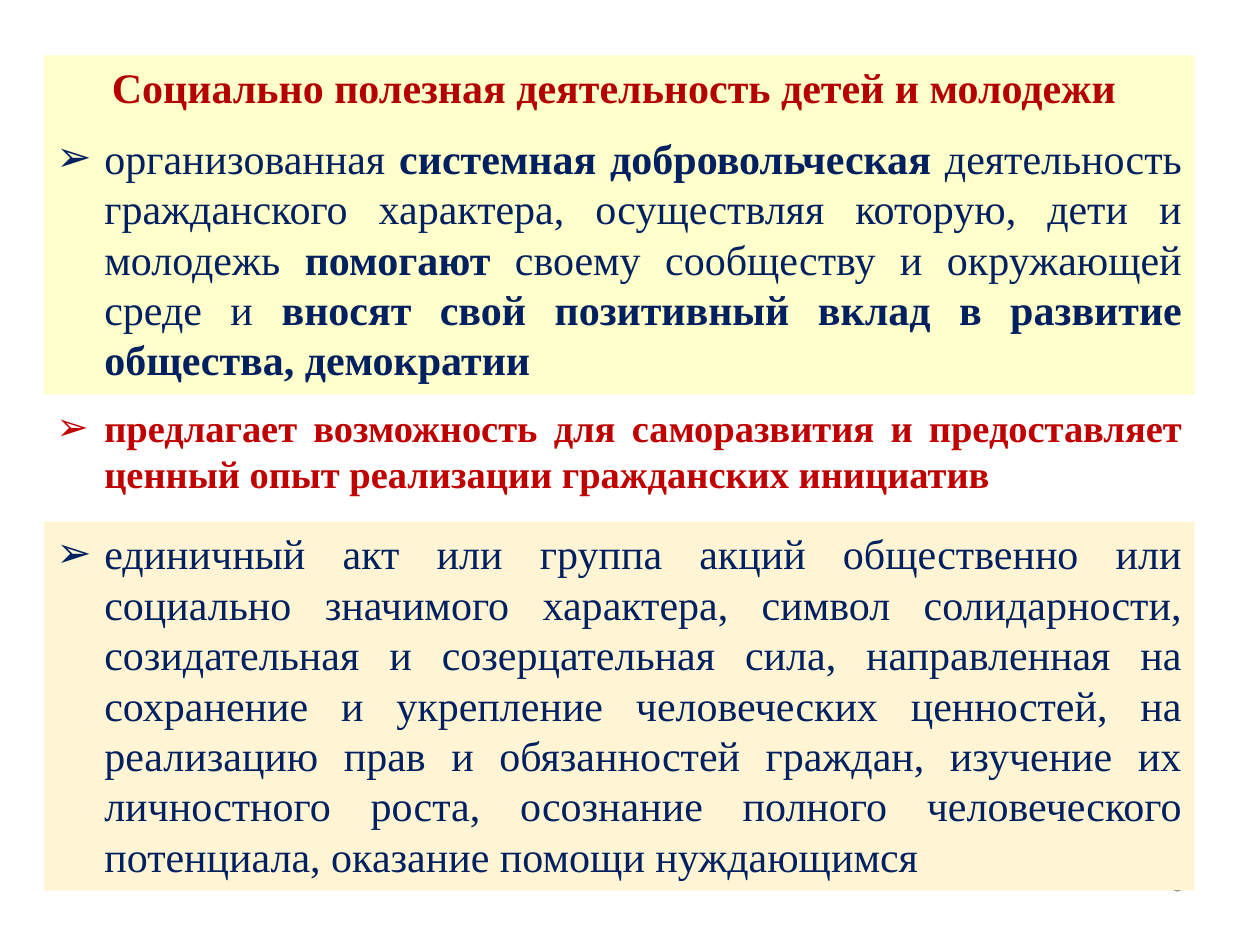
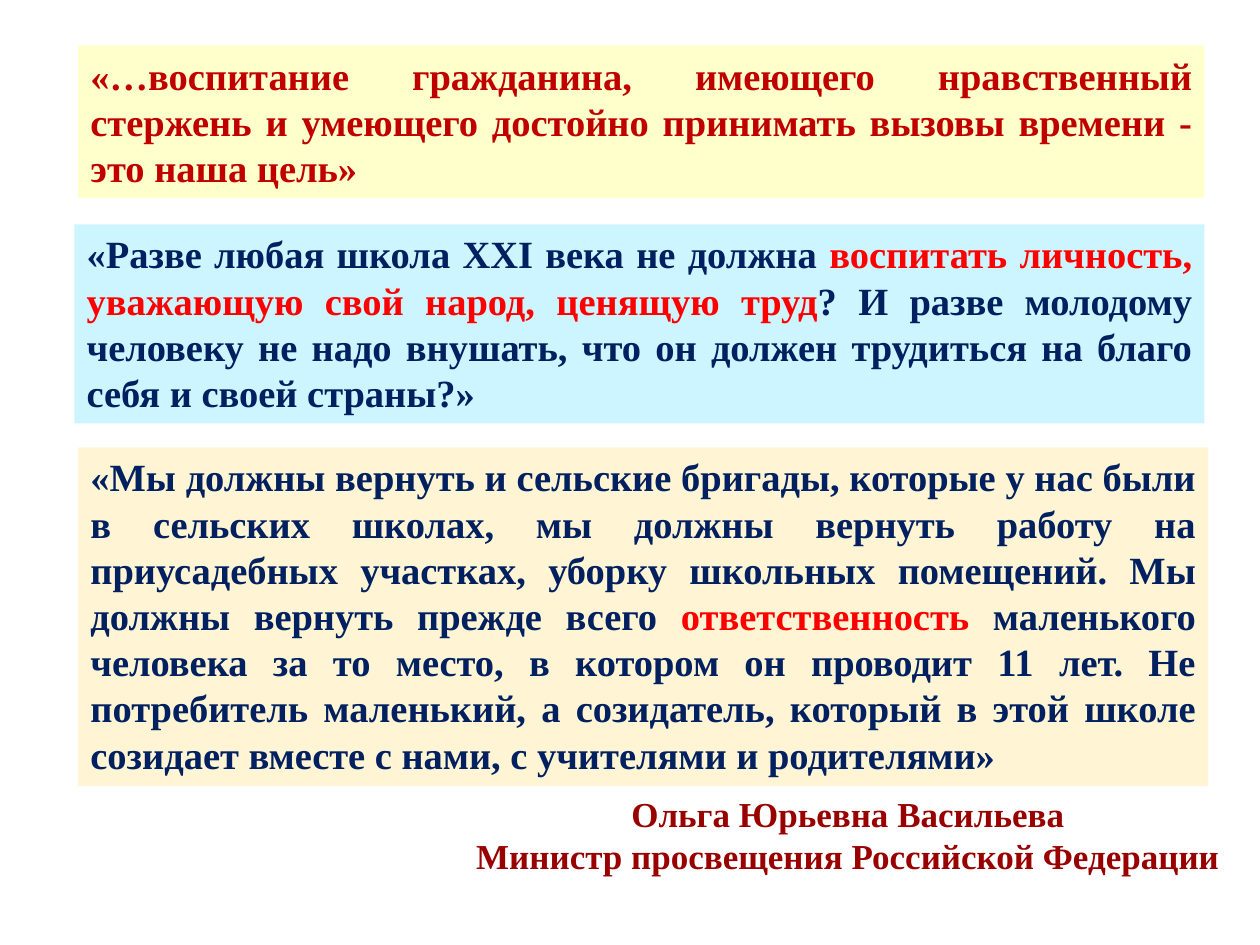
"""Two slides on socially useful youth work: definitions and a minister's quotations."""
from lxml.etree import SubElement
from pptx import Presentation
from pptx.dml.color import RGBColor
from pptx.enum.shapes import MSO_SHAPE
from pptx.enum.text import MSO_ANCHOR, PP_ALIGN
from pptx.oxml.ns import qn
from pptx.util import Inches, Pt

COLORS = {
    "yellow": "FFFFCC", "cream": "FFF5D5", "sky": "CDF5FF",
    "navy": "002060", "crimson": "C00000", "heading": "B40000",
    "red": "FF0000", "maroon": "990000", "black": "000000",
}
FONT = "Times New Roman"
JUSTIFY, CENTER, RIGHT = PP_ALIGN.JUSTIFY, PP_ALIGN.CENTER, PP_ALIGN.RIGHT


def add_panel(slide, box, fill=None):
    """Add a filled rectangle, or a plain text box, and return its text frame."""
    place = [Inches(length) for length in box]
    if fill:
        panel = slide.shapes.add_shape(MSO_SHAPE.RECTANGLE, *place)
        panel.shadow.inherit = False
        panel.fill.solid()
        panel.fill.fore_color.rgb = RGBColor.from_string(COLORS[fill])
        panel.line.fill.background()
    else:
        panel = slide.shapes.add_textbox(*place)
    panel.text_frame.word_wrap = True
    panel.text_frame.vertical_anchor = MSO_ANCHOR.TOP
    return panel.text_frame


def write(paragraph, pieces, size, align=JUSTIFY, bullet=False, font=FONT):
    """Fill a paragraph with (text, colour, bold) pieces."""
    paragraph.alignment = align
    if bullet:
        properties = paragraph._p.get_or_add_pPr()
        properties.set("marL", str(Inches(0.38)))
        properties.set("indent", str(-Inches(0.38)))
        SubElement(properties, qn("a:buFont")).set("typeface", "Arial")
        SubElement(properties, qn("a:buChar")).set("char", "➢")
    for text, color, bold in pieces:
        run = paragraph.add_run()
        run.text = text
        run.font.name = font
        run.font.size = Pt(size)
        run.font.bold = bold
        run.font.color.rgb = RGBColor.from_string(COLORS[color])


deck = Presentation()
deck.slide_width, deck.slide_height = Inches(10), Inches(7.5)
blank = deck.slide_layouts[6]

definitions = deck.slides.add_slide(blank)
page_number = add_panel(definitions, (7.17, 6.83, 2.33, 0.52))
write(page_number.paragraphs[0], [("5", "black", False)], 14, RIGHT, font="Arial")

activity = add_panel(definitions, (0.35, 0.44, 9.13, 2.69), "yellow")
write(activity.paragraphs[0],
      [("Социально полезная деятельность детей и молодежи ", "heading", True)], 24, CENTER)
activity.paragraphs[0].space_after = Pt(11.5)
write(activity.add_paragraph(), [
    ("организованная ", "navy", False),
    ("системная добровольческая", "navy", True),
    (" деятельность гражданского характера, осуществляя которую, дети и молодежь ", "navy", False),
    ("помогают", "navy", True),
    (" своему сообществу и окружающей среде и ", "navy", False),
    ("вносят свой позитивный вклад в развитие общества, демократии", "navy", True),
], 24, bullet=True)

opportunity = add_panel(definitions, (0.35, 3.16, 9.13, 0.84))
write(opportunity.paragraphs[0], [
    ("предлагает возможность для саморазвития и предоставляет ценный опыт "
     "реализации гражданских инициатив", "crimson", True),
], 22, bullet=True)

single_act = add_panel(definitions, (0.35, 4.14, 9.13, 2.93), "cream")
write(single_act.paragraphs[0], [
    ("единичный акт или группа акций общественно или социально значимого характера, "
     "символ солидарности, созидательная и созерцательная сила, направленная на "
     "сохранение и укрепление человеческих ценностей, на реализацию прав и "
     "обязанностей граждан, изучение их личностного роста, осознание полного "
     "человеческого потенциала, оказание помощи нуждающимся ", "navy", False),
], 24, bullet=True)

quotations = deck.slides.add_slide(blank)
quotes = [
    ((0.62, 0.36, 8.94, 1.21), "yellow", [
        ("«…воспитание гражданина, имеющего нравственный стержень и умеющего "
         "достойно принимать вызовы времени - это наша цель»", "crimson", True),
    ]),
    ((0.59, 1.78, 8.97, 1.58), "sky", [
        ("«Разве любая школа XXI века не должна ", "navy", True),
        ("воспитать личность, уважающую свой народ, ценящую труд", "red", True),
        ("? И разве молодому человеку не надо внушать, что он должен трудиться "
         "на благо себя и своей страны?»", "navy", True),
    ]),
    ((0.62, 3.55, 8.97, 2.69), "cream", [
        ("«Мы должны вернуть и сельские бригады, которые у нас были в сельских школах, "
         "мы должны вернуть работу на приусадебных участках, уборку школьных помещений. "
         "Мы должны вернуть прежде всего ", "navy", True),
        ("ответственность ", "red", True),
        ("маленького человека за то место, в котором он проводит 11 лет. "
         "Не потребитель маленький, а созидатель, который в этой школе созидает "
         "вместе с нами, с учителями и родителями»", "navy", True),
    ]),
]
for box, fill, pieces in quotes:
    write(add_panel(quotations, box, fill).paragraphs[0], pieces, 22)

author = add_panel(quotations, (3.66, 6.24, 6.14, 0.77))
author.word_wrap = False
write(author.paragraphs[0], [("Ольга Юрьевна Васильева", "maroon", True)], 20, CENTER)
write(author.add_paragraph(),
      [("Министр просвещения Российской Федерации", "maroon", True)], 20, CENTER)

deck.save("out.pptx")
